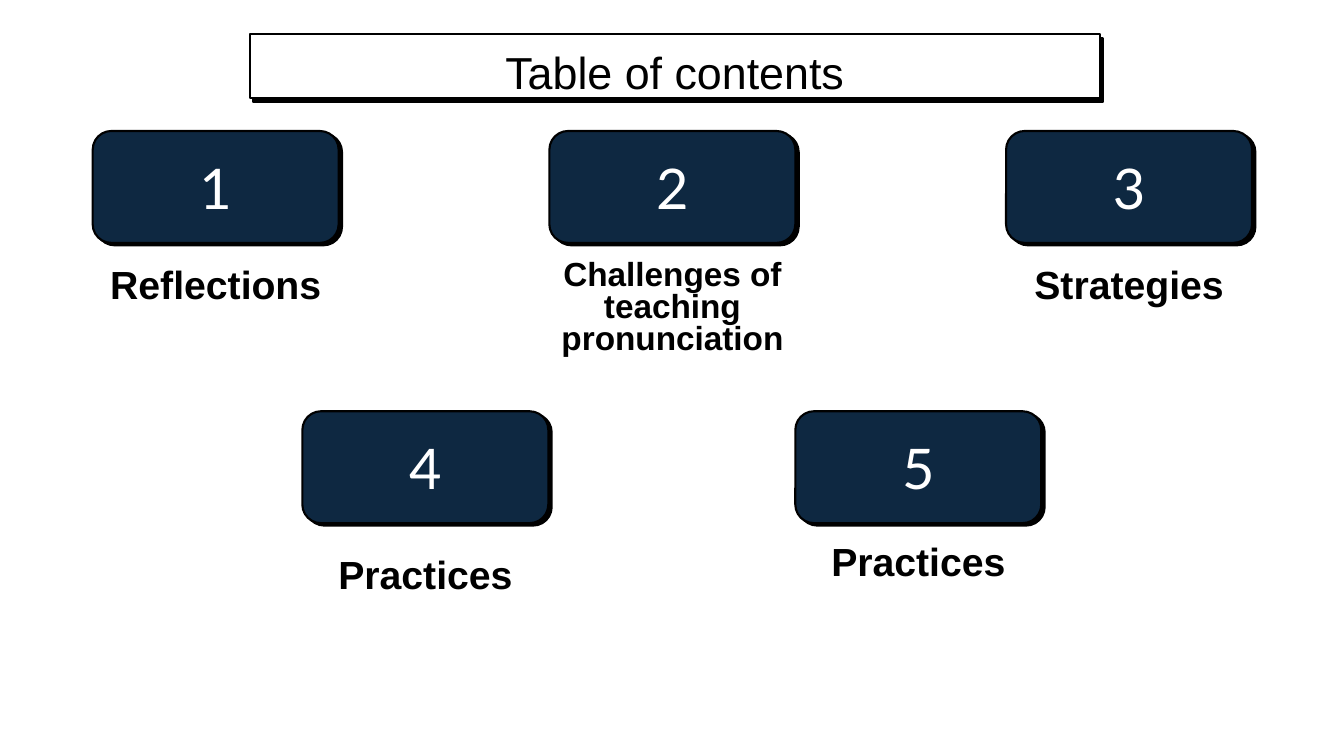
from dataclasses import dataclass

from lxml.etree import SubElement
from pptx import Presentation
from pptx.dml.color import RGBColor
from pptx.enum.shapes import MSO_SHAPE
from pptx.enum.text import MSO_ANCHOR, MSO_AUTO_SIZE, PP_ALIGN
from pptx.oxml.ns import qn
from pptx.shapes.autoshape import Shape
from pptx.slide import Slide
from pptx.util import Emu, Inches, Pt

WIDTH, HEIGHT = Inches(13.33), Inches(7.5)
COLS = ROWS = 100
CARD_W, CARD_H = 18.3, 14.8
BLACK, WHITE, NAVY = "000000", "FFFFFF", "0E2841"


@dataclass
class Topic:
    """A numbered card's label, with its size and gap below the card."""
    label: str
    gap: float
    width: float = 23.48
    height: float = 8.4
    size: float = 28
    spacing: float = 1.0


@dataclass
class CardRow:
    """Evenly spaced cards sharing one top edge."""
    left: float
    top: float
    step: float
    topics: list[Topic]


CARD_ROWS = [
    CardRow(6.9, 17.33, 33.98, [
        Topic("Reflections", 0.14, width=CARD_W, height=9.07),
        Topic("Challenges of teaching pronunciation", 0.54,
              height=15.2, size=23.8, spacing=0.8),
        Topic("Strategies", 0.8),
    ]),
    CardRow(22.5, 54.4, 36.68, [
        Topic("Practices", 2.13),
        Topic("Practices", 0.4),
    ]),
]


def color(hex_code: str) -> RGBColor:
    """Turn a hex string into a colour."""
    return RGBColor.from_string(hex_code)


def box(x: float, y: float, w: float, h: float) -> tuple[Emu, Emu, Emu, Emu]:
    """Turn grid columns and rows into slide lengths."""
    return (Emu(round(WIDTH * x / COLS)), Emu(round(HEIGHT * y / ROWS)),
            Emu(round(WIDTH * w / COLS)), Emu(round(HEIGHT * h / ROWS)))


def style_shape(sp: Shape, fill: str, distance: float, angle: int) -> None:
    """Give a shape its fill, black outline and hard black shadow."""
    sp.fill.solid()
    sp.fill.fore_color.rgb = color(fill)
    sp.line.color.rgb = color(BLACK)
    sp.line.width = Pt(1.5)
    sp.shadow.inherit = False
    effects = sp._element.spPr.find(qn("a:effectLst"))
    shadow = SubElement(effects, qn("a:outerShdw"), blurRad="0", dist=str(Pt(distance)),
                        dir=str(angle * 60000), algn="tl", rotWithShape="0")
    SubElement(shadow, qn("a:srgbClr"), val=BLACK)


def write(sp: Shape, text: str, *, size: float, font: str = "Arial", fill: str = BLACK,
          bold: bool = False, anchor: MSO_ANCHOR = MSO_ANCHOR.MIDDLE,
          inset: float = 0.1, spacing: float = 1.0) -> None:
    """Write one centred, formatted paragraph into a shape."""
    tf = sp.text_frame
    tf.word_wrap = True
    tf.auto_size = MSO_AUTO_SIZE.NONE
    tf.vertical_anchor = anchor
    tf.margin_left = tf.margin_right = Inches(0.1)
    tf.margin_top = tf.margin_bottom = Inches(inset)
    p = tf.paragraphs[0]
    p.alignment = PP_ALIGN.CENTER
    p.line_spacing = spacing
    r = p.add_run()
    r.text = text
    r.font.name = font
    r.font.size = Pt(size)
    r.font.bold = bold
    r.font.color.rgb = color(fill)


def add_title(s: Slide, text: str) -> None:
    """Place and format the title placeholder."""
    sp = s.shapes.title
    sp.left, sp.top, sp.width, sp.height = box(18.6, 4.53, 63.23, 8.4)
    style_shape(sp, WHITE, 3.8, 53)
    write(sp, text, size=32, anchor=MSO_ANCHOR.TOP)


def add_card(s: Slide, number: int, x: float, y: float) -> None:
    """Draw one numbered card."""
    sp = s.shapes.add_shape(MSO_SHAPE.ROUNDED_RECTANGLE, *box(x, y, CARD_W, CARD_H))
    style_shape(sp, NAVY, 3, 36)
    write(sp, str(number), size=40, font="Lato", fill=WHITE)


def add_label(s: Slide, topic: Topic, x: float, y: float) -> None:
    """Write a topic's label centred below its card."""
    left = x + (CARD_W - topic.width) / 2
    top = y + CARD_H + topic.gap
    sp = s.shapes.add_textbox(*box(left, top, topic.width, topic.height))
    write(sp, topic.label, size=topic.size, bold=True, anchor=MSO_ANCHOR.BOTTOM,
          inset=0.05, spacing=topic.spacing)


def main() -> None:
    """Build and save the slide."""
    prs = Presentation()
    prs.slide_width, prs.slide_height = WIDTH, HEIGHT
    s = prs.slides.add_slide(prs.slide_layouts.get_by_name("Title Only"))
    add_title(s, "Table of contents")
    number = 0
    for row in CARD_ROWS:
        for i, topic in enumerate(row.topics):
            number += 1
            x = row.left + i * row.step
            add_card(s, number, x, row.top)
            add_label(s, topic, x, row.top)
    prs.save("out.pptx")


if __name__ == "__main__":
    main()
